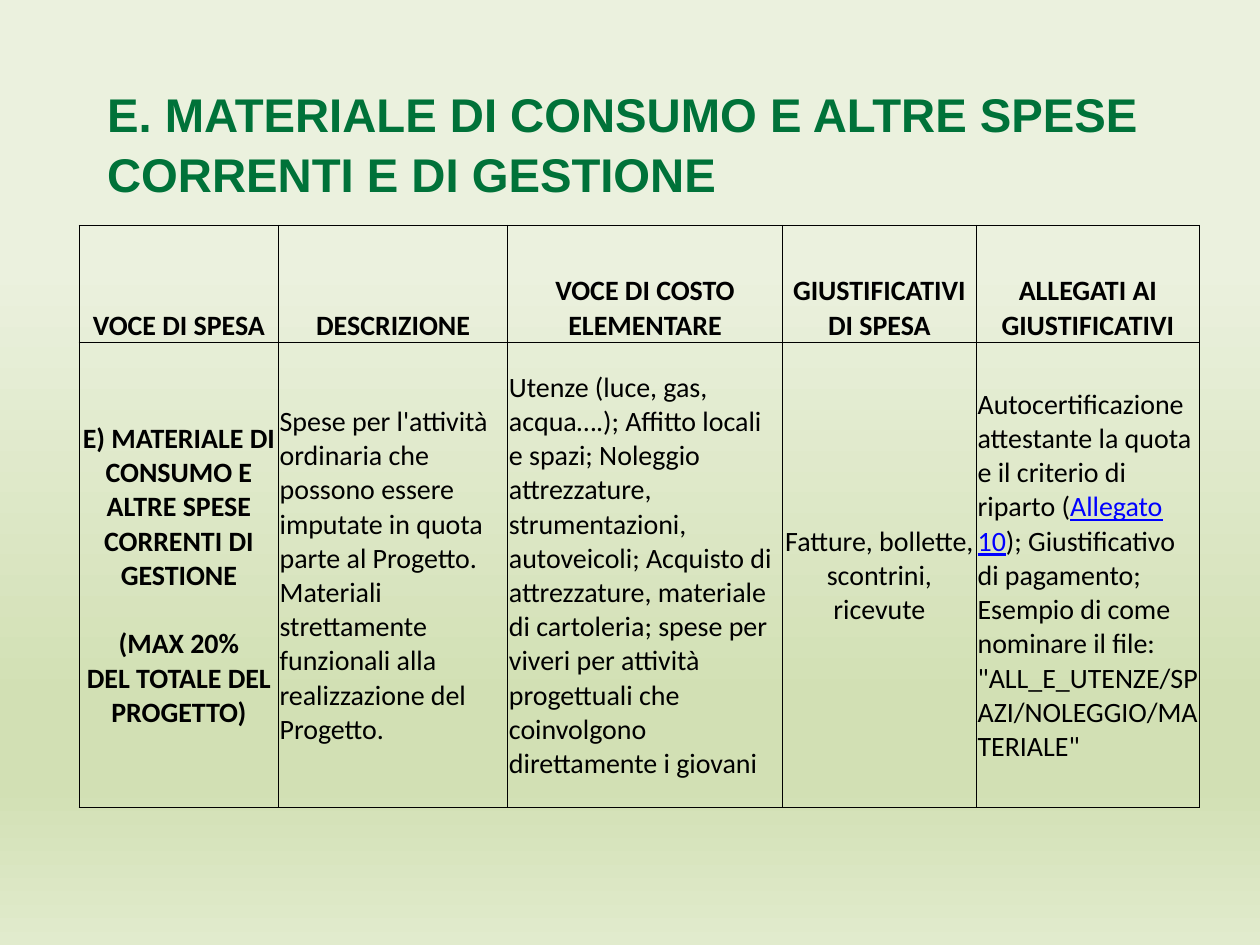
import pptx
from lxml import etree
from pptx.dml.color import RGBColor
from pptx.enum.text import MSO_ANCHOR, MSO_AUTO_SIZE, PP_ALIGN
from pptx.oxml.ns import qn
from pptx.util import Inches, Pt

COLORS = {
    "title": "007239",
    "text": "000000",
    "link": "0000FF",
    "border": "000000",
    "pale": "EBF1DE",
    "green": "D2E0B4",
    "light": "E1EBCD",
}
BACKGROUND_STOPS = [(28, "pale"), (74, "green"), (83, "green"), (100, "light")]
COLUMN_WIDTHS = [1.58, 1.82, 2.18, 1.54, 1.77]
ROW_HEIGHTS = [0.93, 3.69]
CENTERED_COLUMNS = (0, 3)
LINK_TEXT = "Allegato 10"
HEADERS = [
    "VOCE DI SPESA",
    "DESCRIZIONE",
    "VOCE DI COSTO ELEMENTARE",
    "GIUSTIFICATIVI DI SPESA",
    "ALLEGATI AI GIUSTIFICATIVI",
]
DETAILS = [
    "E) MATERIALE DI CONSUMO E ALTRE SPESE CORRENTI DI GESTIONE\n"
    "(MAX 20%\nDEL TOTALE DEL PROGETTO)",
    "Spese per l'attività ordinaria che possono essere imputate in quota parte "
    "al Progetto. Materiali strettamente funzionali alla realizzazione del Progetto.",
    "Utenze (luce, gas, acqua….); Affitto locali e spazi; Noleggio attrezzature, "
    "strumentazioni, autoveicoli; Acquisto di attrezzature, materiale di cartoleria; "
    "spese per viveri per attività progettuali che coinvolgono direttamente i giovani",
    "Fatture, bollette, scontrini, ricevute",
    "Autocertificazione attestante la quota e il criterio di riparto (Allegato 10); "
    "Giustificativo di pagamento; Esempio di come nominare il file: "
    '"ALL_E_UTENZE/SPAZI/NOLEGGIO/MATERIALE"',
]


def format_font(font, name, size, color, bold):
    font.name = name
    font.size = Pt(size)
    font.bold = bold
    font.color.rgb = RGBColor.from_string(COLORS[color])


def set_background(slide):
    fill = slide.background.fill
    fill.gradient()
    fill.gradient_angle = 270
    stops = slide.element.find(".//" + qn("a:gsLst"))
    for stop in list(stops):
        stops.remove(stop)
    for position, color in BACKGROUND_STOPS:
        stop = etree.SubElement(stops, qn("a:gs"), pos=str(position * 1000))
        etree.SubElement(stop, qn("a:srgbClr"), val=COLORS[color])


def add_title(slide, text):
    title = slide.shapes.title
    title.left, title.top = Inches(0.75), Inches(0.72)
    title.width, title.height = Inches(8.5), Inches(0.82)
    frame = title.text_frame
    frame.text = text
    frame.word_wrap = True
    frame.auto_size = MSO_AUTO_SIZE.NONE
    frame.vertical_anchor = MSO_ANCHOR.MIDDLE
    paragraph = frame.paragraphs[0]
    paragraph.alignment = PP_ALIGN.LEFT
    paragraph.line_spacing = 1.05
    format_font(paragraph.runs[0].font, "Arial", 27, "title", True)


def set_borders(cell, outer_sides):
    properties = cell._tc.get_or_add_tcPr()
    for side in "LRTB":
        width = Pt(1 if side in outer_sides else 0.5)
        line = etree.SubElement(properties, qn("a:ln" + side), w=str(width))
        fill = etree.SubElement(line, qn("a:solidFill"))
        etree.SubElement(fill, qn("a:srgbClr"), val=COLORS["border"])


def fill_cell(cell, text, bold, centered, anchor):
    cell.margin_left = cell.margin_right = cell.margin_top = Inches(0.01)
    cell.margin_bottom = 0
    cell.vertical_anchor = anchor
    cell.fill.background()
    cell.text_frame.text = text
    for paragraph in cell.text_frame.paragraphs:
        paragraph.alignment = PP_ALIGN.CENTER if centered else PP_ALIGN.LEFT
        before, link, after = paragraph.text.partition(LINK_TEXT)
        paragraph.text = before
        for part in filter(None, (link, after)):
            paragraph.add_run().text = part
        for run in paragraph.runs:
            is_link = run.text == LINK_TEXT
            format_font(run.font, "Calibri", 16, "link" if is_link else "text", bold)
            run.font.underline = is_link


def add_expense_table(slide):
    table = slide.shapes.add_table(
        len(ROW_HEIGHTS), len(COLUMN_WIDTHS), Inches(0.63), Inches(1.79),
        Inches(sum(COLUMN_WIDTHS)), Inches(sum(ROW_HEIGHTS)),
    ).table
    table.first_row = table.horz_banding = False
    for column, width in zip(table.columns, COLUMN_WIDTHS):
        column.width = Inches(width)
    for row, height in zip(table.rows, ROW_HEIGHTS):
        row.height = Inches(height)
    last_column = len(COLUMN_WIDTHS) - 1
    for row_index, texts in enumerate((HEADERS, DETAILS)):
        is_header = row_index == 0
        for column_index, text in enumerate(texts):
            cell = table.cell(row_index, column_index)
            outer_sides = "T" if is_header else "B"
            outer_sides += {0: "L", last_column: "R"}.get(column_index, "")
            set_borders(cell, outer_sides)
            fill_cell(
                cell, text,
                bold=is_header or column_index == 0,
                centered=is_header or column_index in CENTERED_COLUMNS,
                anchor=MSO_ANCHOR.BOTTOM if is_header else MSO_ANCHOR.MIDDLE,
            )
    table.cell(1, 0).text_frame.paragraphs[1].space_before = Pt(19.5)


def main():
    presentation = pptx.Presentation()
    presentation.slide_width = Inches(10)
    presentation.slide_height = Inches(7.5)
    slide = presentation.slides.add_slide(presentation.slide_layouts[5])
    set_background(slide)
    add_title(slide, "E. MATERIALE DI CONSUMO E ALTRE SPESE CORRENTI E DI GESTIONE")
    add_expense_table(slide)
    presentation.save("out.pptx")


if __name__ == "__main__":
    main()
